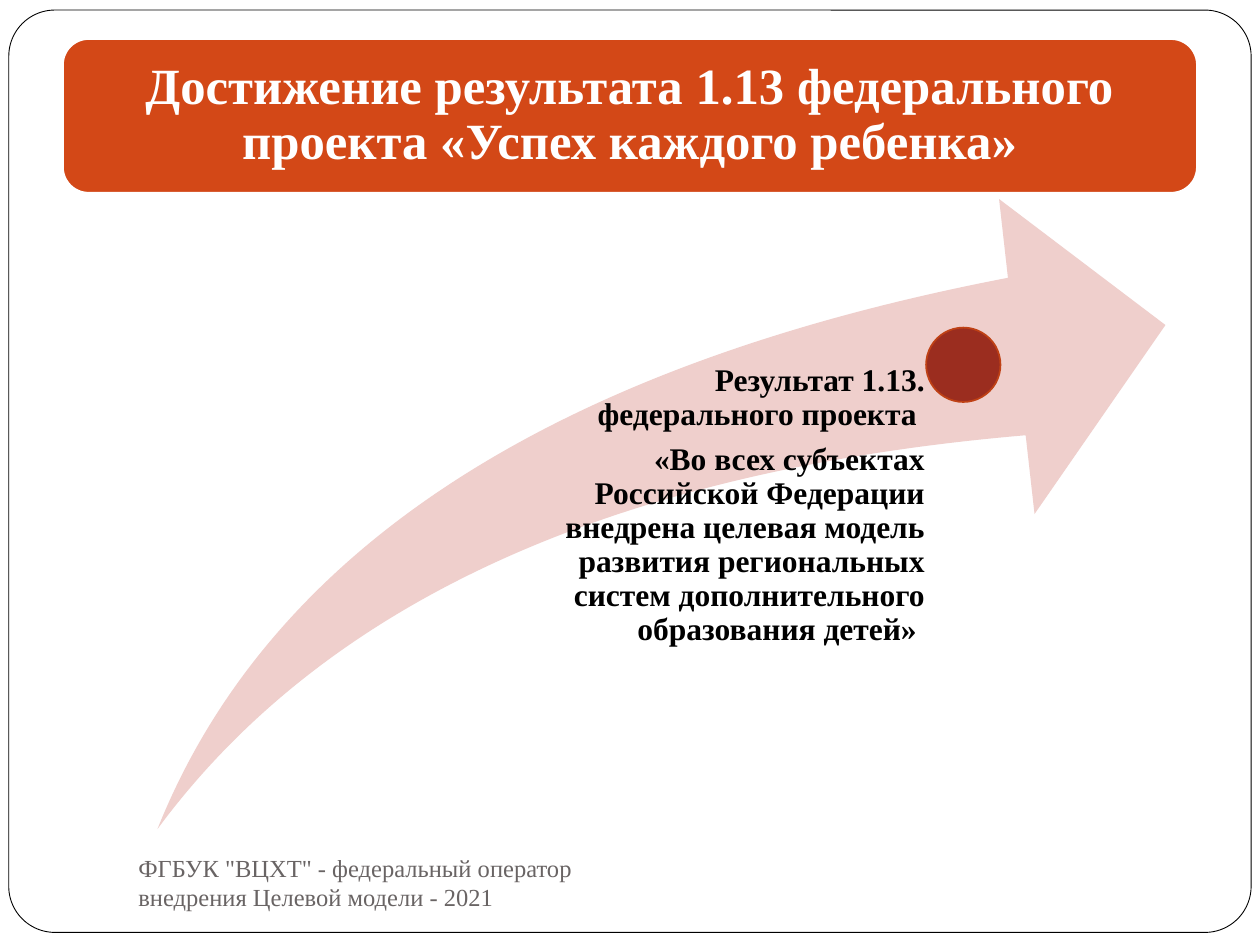
import pptx
import pptx.util
import pptx.dml.color
from pptx.enum.shapes import MSO_SHAPE
from pptx.enum.text import MSO_ANCHOR, MSO_AUTO_SIZE, PP_ALIGN

Inches, Pt = pptx.util.Inches, pptx.util.Pt

FONT = "Times New Roman"
COLORS = {
    "white": "FFFFFF",
    "black": "000000",
    "orange": "D34817",
    "pink": "EFCFCC",
    "red": "9B2D1F",
    "rust": "BF4115",
    "gray": "696464",
}


def color(name):
    return pptx.dml.color.RGBColor.from_string(COLORS[name])


def add_form(slide, kind, box, fill, line=None, width=1, adj=()):
    form = slide.shapes.add_shape(kind, *map(Inches, box))
    form.shadow.inherit = False
    form.fill.solid()
    form.fill.fore_color.rgb = color(fill)
    if line:
        form.line.color.rgb = color(line)
        form.line.width = Pt(width)
    else:
        form.line.fill.background()
    for i, value in enumerate(adj):
        form.adjustments[i] = value
    return form


def set_text(shape, lines, size, tint, bold=False, align=PP_ALIGN.LEFT,
             anchor=MSO_ANCHOR.MIDDLE, insets=(0.1, 0.05, 0.1, 0.05),
             spacing=1.0, after=0):
    frame = shape.text_frame
    frame.word_wrap = True
    frame.auto_size = MSO_AUTO_SIZE.NONE
    frame.vertical_anchor = anchor
    (frame.margin_left, frame.margin_top,
     frame.margin_right, frame.margin_bottom) = map(Inches, insets)
    for i, line in enumerate(lines):
        para = frame.add_paragraph() if i else frame.paragraphs[0]
        para.alignment = align
        para.line_spacing = spacing
        para.space_before = Pt(0)
        para.space_after = Pt(after)
        run = para.add_run()
        run.text = line
        run.font.name = FONT
        run.font.size = Pt(size)
        run.font.bold = bold
        run.font.color.rgb = color(tint)


def add_title(slide, box):
    add_form(slide, MSO_SHAPE.ROUNDED_RECTANGLE, box, "orange", "white")
    title = slide.shapes.title
    title.left, title.top, title.width, title.height = map(Inches, box)
    set_text(title,
             ["Достижение результата 1.13 федерального проекта "
              "«Успех каждого ребенка»"],
             29, "white", True, PP_ALIGN.CENTER, insets=(0.12,) * 4,
             spacing=0.9)
    # Bring the title in front of its banner
    slide.shapes._spTree.append(title._element)


def add_footer(slide, box):
    note = slide.shapes.add_textbox(*map(Inches, box))
    set_text(note,
             ['ФГБУК "ВЦХТ" - федеральный оператор внедрения '
              'Целевой модели - 2021'],
             14, "gray")


def add_growth(slide, box):
    left, top, width, height = box
    # Rising arrow
    add_form(slide, MSO_SHAPE.SWOOSH_ARROW, box, "pink", adj=(0.25, 0.25))
    # Milestone dot
    dot = 0.59
    add_form(slide, MSO_SHAPE.OVAL, (left + 6.1, top + 1.02, dot, dot),
             "red", "rust")
    # Result text, reaching down to the foot of the arrow
    drop = 1.31
    label = slide.shapes.add_textbox(
        *map(Inches, (left + 3.2, top + drop, 0.4 * width, height - drop)))
    set_text(label,
             ["Результат 1.13. федерального проекта ",
              "«Во всех субъектах Российской Федерации внедрена целевая "
              "модель развития региональных систем дополнительного "
              "образования детей» "],
             18, "black", True, PP_ALIGN.RIGHT, MSO_ANCHOR.TOP,
             (0, 0, 0.31, 0), 0.9, 6.3)


def main():
    deck = pptx.Presentation()
    deck.slide_width, deck.slide_height = Inches(10), Inches(7.5)
    slide = deck.slides.add_slide(deck.slide_layouts[5])
    # Page frame
    add_form(slide, MSO_SHAPE.ROUNDED_RECTANGLE, (0.07, 0.08, 9.86, 7.32),
             "white", "black", 0.5, (0.05,))
    add_title(slide, (0.5, 0.31, 9, 1.22))
    add_footer(slide, (1, 6.75, 4.33, 0.5))
    add_growth(slide, (1.25, 1.58, 8, 5))
    deck.save("out.pptx")


if __name__ == "__main__":
    main()
